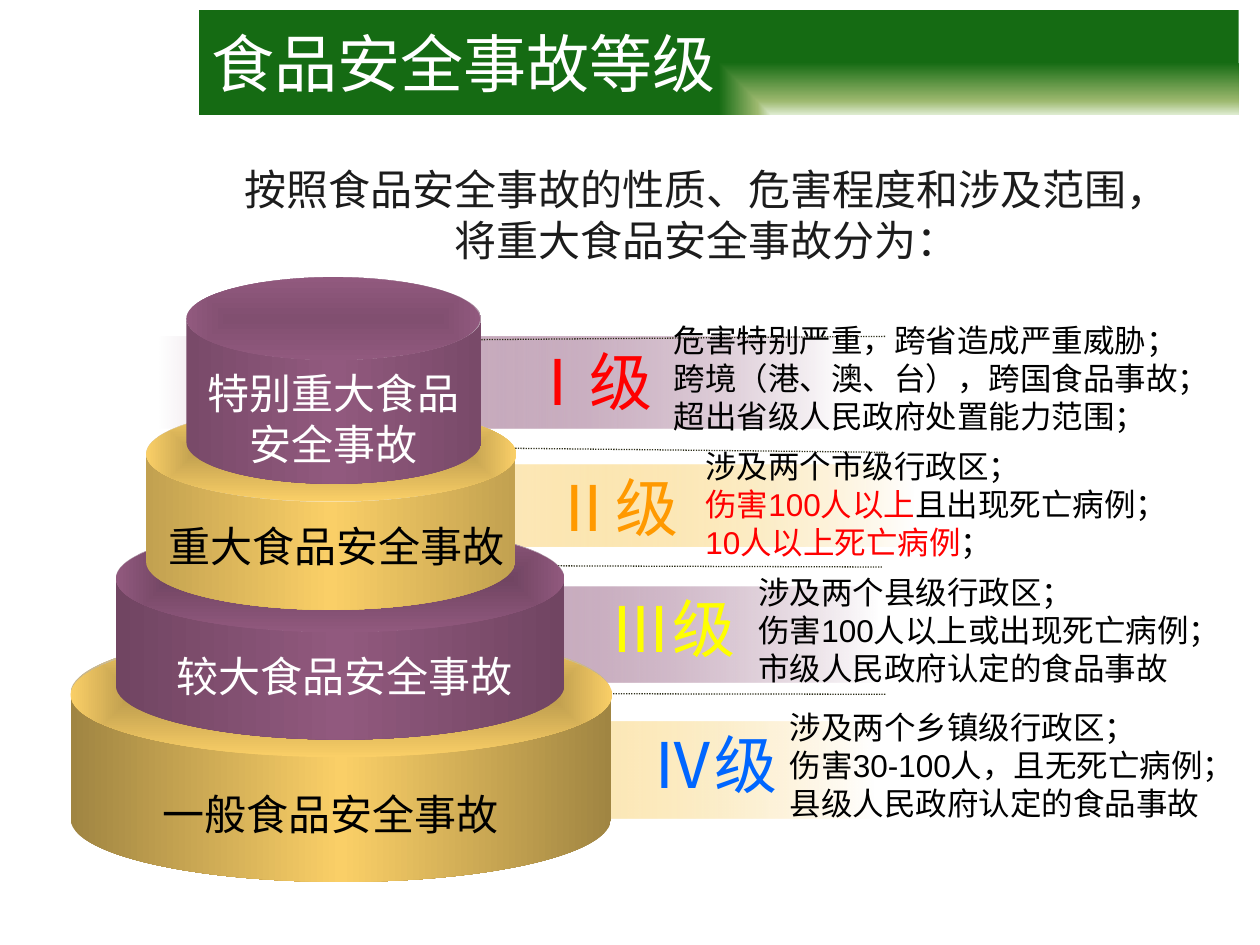
from dataclasses import dataclass

from lxml import etree
from pptx import Presentation
from pptx.dml.color import RGBColor
from pptx.enum.dml import MSO_LINE
from pptx.enum.shapes import MSO_CONNECTOR, MSO_SHAPE
from pptx.enum.text import MSO_ANCHOR, MSO_AUTO_SIZE, PP_ALIGN
from pptx.oxml.ns import qn
from pptx.util import Emu, Pt

RECT, CAN, OVAL = MSO_SHAPE.RECTANGLE, MSO_SHAPE.CAN, MSO_SHAPE.OVAL
STRAIGHT, DOTTED = MSO_CONNECTOR.STRAIGHT, MSO_LINE.ROUND_DOT
LEFT, CENTER, MIDDLE = PP_ALIGN.LEFT, PP_ALIGN.CENTER, MSO_ANCHOR.MIDDLE
GROW = MSO_AUTO_SIZE.SHAPE_TO_FIT_TEXT

PX = 9144  # 100 px to the inch
FONT = "Arial"
COLORS = {
    "white": "FFFFFF", "black": "000000", "ink": "1C1C1C", "rule": "30311D",
    "red": "FF0000", "orange": "FF9900", "yellow": "FFFF00", "blue": "0066FF",
    "purple": "91597E", "gold": "FACF67",
    "mist": "DDEBCF", "moss": "9CB86E", "green": "156B13",
    "gold_dark": "A08542", "gold_rim": "B9994C", "gold_soft": "C2A150",
    "purple_dark": "714562", "purple_soft": "794A69", "purple_rim": "814F70",
}

Box = tuple[int, int, int, int]
Run = tuple[str, str]  # text, colour name
Stop = tuple[int, str, int]  # position %, colour name, opacity %


@dataclass
class Tier:
    can: Box
    bend: float
    top: Box
    color: str
    edge: str
    rim: str
    label_box: Box
    label: str
    label_color: str
    align: PP_ALIGN = CENTER


@dataclass
class Level:
    band: Box
    band_color: str
    rule: Box  # x1, y1, x2, y2
    mark_box: Box
    mark: str
    mark_color: str
    note_box: Box
    note: list[list[Run]]


# Listed from the bottom of the stack upwards
TIERS = [
    Tier((56, 500, 429, 200), 0.5, (56, 502, 430, 99), "gold", "gold_dark", "gold_rim",
         (85, 621, 354, 50), "一般食品安全事故", "black"),
    Tier((92, 416, 356, 171), 0.5, (92, 417, 356, 85), "purple", "purple_dark", "purple_dark",
         (116, 511, 315, 50), "较大食品安全事故", "white"),
    Tier((116, 322, 293, 162), 0.47, (116, 323, 294, 75), "gold", "gold_soft", "gold_soft",
         (124, 408, 307, 51), "重大食品安全事故", "black", LEFT),
    Tier((148, 220, 234, 164), 0.4, (148, 220, 233, 66), "purple", "purple_soft", "purple_rim",
         (155, 287, 220, 91), "特别重大食品安全事故", "white"),
]

LEVELS = [
    Level((127, 267, 542, 73), "purple", (206, 271, 703, 267),
          (408, 267, 121, 71), "Ⅰ级", "red", (525, 250, 450, 101),
          [[("危害特别严重，跨省造成严重威胁；", "black")],
           [("跨境（港、澳、台），跨国食品事故；", "black")],
           [("超出省级人民政府处置能力范围；", "black")]]),
    Level((222, 369, 503, 65), "gold", (151, 353, 703, 359),
          (429, 367, 121, 71), "Ⅱ级", "orange", (550, 350, 408, 101),
          [[("涉及两个市级行政区；", "black")],
           [("伤害100人以上", "red"), ("且出现死亡病例；", "black")],
           [("10人以上死亡病例", "red"), ("；", "black")]]),
    Level((127, 466, 569, 76), "purple", (140, 448, 700, 450),
          (474, 463, 121, 71), "Ⅲ级", "yellow", (592, 450, 392, 101),
          [[("涉及两个县级行政区；", "black")],
           [("伤害100人以上或出现死亡病例；", "black")],
           [("市级人民政府认定的食品事故", "black")]]),
    Level((135, 573, 558, 77), "gold", (112, 550, 703, 551),
          (507, 571, 121, 71), "Ⅳ级", "blue", (617, 557, 367, 101),
          [[("涉及两个乡镇级行政区；", "black")],
           [("伤害30-100人，且无死亡病例；", "black")],
           [("县级人民政府认定的食品事故", "black")]]),
]


def emu(box: Box) -> list[Emu]:
    return [Emu(v * PX) for v in box]


def rgb(name: str) -> RGBColor:
    return RGBColor.from_string(COLORS[name])


def add_color(parent, name: str, opacity: int = 100) -> None:
    clr = etree.SubElement(parent, qn("a:srgbClr"), val=COLORS[name])
    if opacity < 100:
        etree.SubElement(clr, qn("a:alpha"), val=str(opacity * 1000))


def add_gradient_shape(shapes, kind, box: Box, stops: list[Stop], path: str = "", focus: Box = (50,) * 4):
    """Add a borderless shape with a horizontal gradient, or a path gradient if path is given."""
    sp = shapes.add_shape(kind, *emu(box))
    sp.shadow.inherit = False
    sp.line.fill.background()
    grad = etree.Element(qn("a:gradFill"), rotWithShape="1")
    stop_list = etree.SubElement(grad, qn("a:gsLst"))
    for pos, color, opacity in stops:
        add_color(etree.SubElement(stop_list, qn("a:gs"), pos=str(pos * 1000)), color, opacity)
    if path:
        route = etree.SubElement(grad, qn("a:path"), path=path)
        sides = {side: str(v * 1000) for side, v in zip("ltrb", focus)}
        etree.SubElement(route, qn("a:fillToRect"), sides)
    else:
        etree.SubElement(grad, qn("a:lin"), ang="0", scaled="1")
    sp._element.spPr.find(qn("a:prstGeom")).addnext(grad)
    return sp


def write(tf, paragraphs: list[list[Run]], size: int, align: PP_ALIGN = LEFT, outline: bool = False) -> None:
    for i, runs in enumerate(paragraphs):
        p = tf.add_paragraph() if i else tf.paragraphs[0]
        p.alignment = align
        for text, color in runs:
            r = p.add_run()
            r.text = text
            r.font.name, r.font.size = FONT, Pt(size)
            r.font.color.rgb = rgb(color)
            if outline:
                ln = etree.Element(qn("a:ln"), w=str(Pt(0.75)))
                add_color(etree.SubElement(ln, qn("a:solidFill")), "black")
                r.font._element.insert(0, ln)


def add_text(shapes, box: Box, paragraphs: list[list[Run]], size: int,
             align: PP_ALIGN = LEFT, wrap: bool = True, outline: bool = False) -> None:
    tf = shapes.add_textbox(*emu(box)).text_frame
    tf.word_wrap, tf.auto_size = wrap, GROW
    write(tf, paragraphs, size, align, outline)


def add_rule(shapes, ends: Box) -> None:
    line = shapes.add_connector(STRAIGHT, *emu(ends))
    line.line.color.rgb = rgb("rule")
    line.line.width, line.line.dash_style = Pt(0.75), DOTTED
    etree.SubElement(line._element.spPr, qn("a:effectLst"))


def add_cylinder(shapes, tier: Tier) -> None:
    group = shapes.add_group_shape().shapes
    can = add_gradient_shape(group, CAN, tier.can, [
        (0, tier.edge, 100), (50, tier.color, 100), (100, tier.edge, 100)])
    can.adjustments[0] = tier.bend
    add_gradient_shape(group, OVAL, tier.top, [(0, tier.rim, 100), (100, tier.color, 100)], "shape")


def main() -> None:
    prs = Presentation()
    prs.slide_width, prs.slide_height = Emu(1000 * PX), Emu(750 * PX)
    shapes = prs.slides.add_slide(prs.slide_layouts[6]).shapes

    title = add_gradient_shape(shapes, RECT, (158, 8, 825, 83), [
        (0, "mist", 100), (26, "moss", 100), (100, "green", 100)], "rect", (100, 100, 0, 0))
    title.text_frame.word_wrap, title.text_frame.vertical_anchor = True, MIDDLE
    write(title.text_frame, [[("食品安全事故等级", "white")]], 36)

    for level in LEVELS:
        add_gradient_shape(shapes, RECT, level.band, [
            (0, "white", 100), (50, level.band_color, 50), (100, "white", 100)])
    for level in LEVELS:
        add_rule(shapes, level.rule)
    for tier in TIERS:
        add_cylinder(shapes, tier)
    for tier in TIERS:
        add_text(shapes, tier.label_box, [[(tier.label, tier.label_color)]], 24, tier.align)
    for level in LEVELS:
        add_text(shapes, level.mark_box, [[(level.mark, level.mark_color)]], 36, wrap=False, outline=True)
        add_text(shapes, level.note_box, level.note, 18)
    add_text(shapes, (175, 125, 772, 91), [
        [("按照食品安全事故的性质、危害程度和涉及范围，将重大食品安全事故分为：", "ink")]], 24, CENTER)

    prs.save("out.pptx")


if __name__ == "__main__":
    main()
